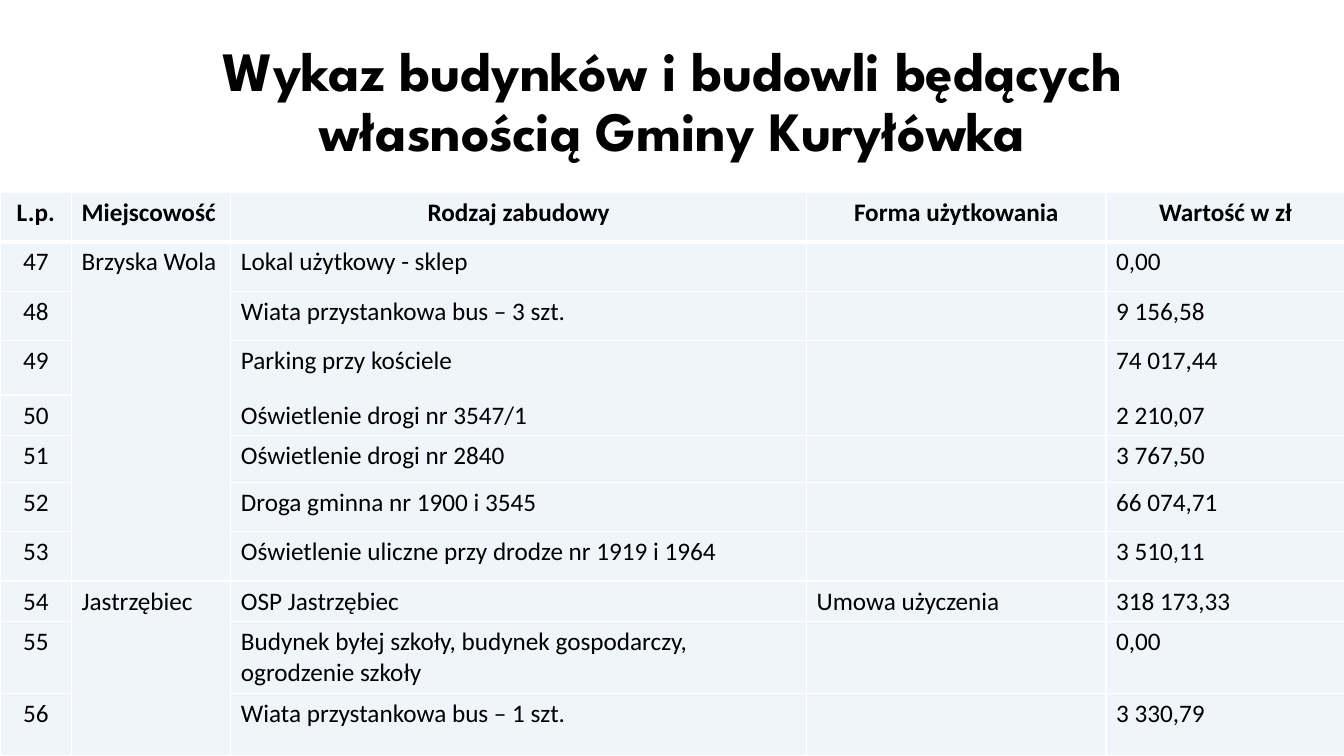
from lxml import etree
from pptx import Presentation
from pptx.dml.color import RGBColor
from pptx.enum import text
from pptx.oxml import ns
from pptx.util import Inches, Pt

TITLE = "Wykaz budynków i budowli będących własnością Gminy Kuryłówka"
HEAD = ("L.p.", "Miejscowość", "Rodzaj zabudowy", "Forma użytkowania", "Wartość w zł")
# Numbers 49 and 50 share a zero-height row, so number 50 is split over two rows.
ROWS = [
    ("47", "Brzyska Wola", "Lokal użytkowy - sklep", "", "0,00"),
    ("48", "", "Wiata przystankowa bus – 3 szt.", "", "9 156,58"),
    ("49", "", "Parking przy kościele", "", "74 017,44"),
    ("", "", "Oświetlenie drogi nr 3547/1", "", "2 210,07"),
    ("50", "", "", "", ""),
    ("51", "", "Oświetlenie drogi nr 2840", "", "3 767,50"),
    ("52", "", "Droga gminna nr 1900 i 3545", "", "66 074,71"),
    ("53", "", "Oświetlenie uliczne przy drodze nr 1919 i 1964", "", "3 510,11"),
    ("54", "Jastrzębiec", "OSP Jastrzębiec", "Umowa użyczenia", "318 173,33"),
    ("55", "", "Budynek byłej szkoły, budynek gospodarczy, ogrodzenie szkoły", "", "0,00"),
    ("56", "", "Wiata przystankowa bus – 1 szt.", "", "3 330,79"),
]
WIDTHS = (0.71, 1.58, 5.71, 2.97, 2.37)
HEIGHTS = (0.49, 0.49, 0.49, 0.54, 0, 0.38, 0.46, 0.49, 0.49, 0.38, 0.66, 0.62)
# First row, last row, column
MERGES = [(1, 8, 1), (9, 11, 1), (3, 4, 0), (4, 5, 2), (4, 5, 3), (4, 5, 4)]
COLORS = {"text": "000000", "cell": "5B9BD5", "line": "FFFFFF"}
OPACITY = 9


def style(font, name, size, bold):
    font.name, font.size, font.bold = name, Pt(size), bold
    font.color.rgb = RGBColor.from_string(COLORS["text"])


def paint(cell, base):
    """Give the cell a pale see-through fill and white borders."""
    cell.fill.solid()
    cell.fill.fore_color.rgb = RGBColor.from_string(COLORS["cell"])
    props = cell._tc.get_or_add_tcPr()
    tint = props.find(".//" + ns.qn("a:srgbClr"))
    etree.SubElement(tint, ns.qn("a:alpha"), val=str(OPACITY * 1000))
    for i, (side, width) in enumerate((("L", 1), ("R", 1), ("T", 1), ("B", base))):
        line = etree.Element(ns.qn("a:ln" + side), w=str(Pt(width)))
        fill = etree.SubElement(line, ns.qn("a:solidFill"))
        etree.SubElement(fill, ns.qn("a:srgbClr"), val=COLORS["line"])
        props.insert(i, line)


def add_title(slide):
    title = slide.shapes.title
    title.left, title.top = Inches(0.92), Inches(0.3)
    title.width, title.height = Inches(11.5), Inches(1.45)
    frame = title.text_frame
    frame.text = TITLE
    frame.word_wrap = True
    frame.vertical_anchor = text.MSO_ANCHOR.MIDDLE
    para = frame.paragraphs[0]
    para.alignment = text.PP_ALIGN.CENTER
    para.line_spacing = 0.9
    style(para.runs[0].font, "League Spartan", 39.6, True)


def add_list(slide):
    data = [HEAD] + ROWS
    table = slide.shapes.add_table(
        len(data), len(HEAD), 0, Inches(1.91),
        Inches(sum(WIDTHS)), Inches(sum(HEIGHTS))).table
    table.first_row = table.horz_banding = False
    for col, width in zip(table.columns, WIDTHS):
        col.width = Inches(width)
    for r, (row, height) in enumerate(zip(data, HEIGHTS)):
        table.rows[r].height = Inches(height)
        for c, words in enumerate(row):
            cell = table.cell(r, c)
            cell.text = words
            para = cell.text_frame.paragraphs[0]
            middle = c == 0 or (r == 0 and c != 1)
            para.alignment = text.PP_ALIGN.CENTER if middle else text.PP_ALIGN.LEFT
            for run in para.runs:
                style(run.font, "Calibri", 18, r == 0)
            paint(cell, 3 if r == 0 else 1)
    for first, last, c in MERGES:
        table.cell(first, c).merge(table.cell(last, c))


def main():
    deck = Presentation()
    deck.slide_width, deck.slide_height = Inches(13.33), Inches(7.5)
    slide = deck.slides.add_slide(deck.slide_layouts[5])
    add_title(slide)
    add_list(slide)
    deck.save("out.pptx")


if __name__ == "__main__":
    main()
